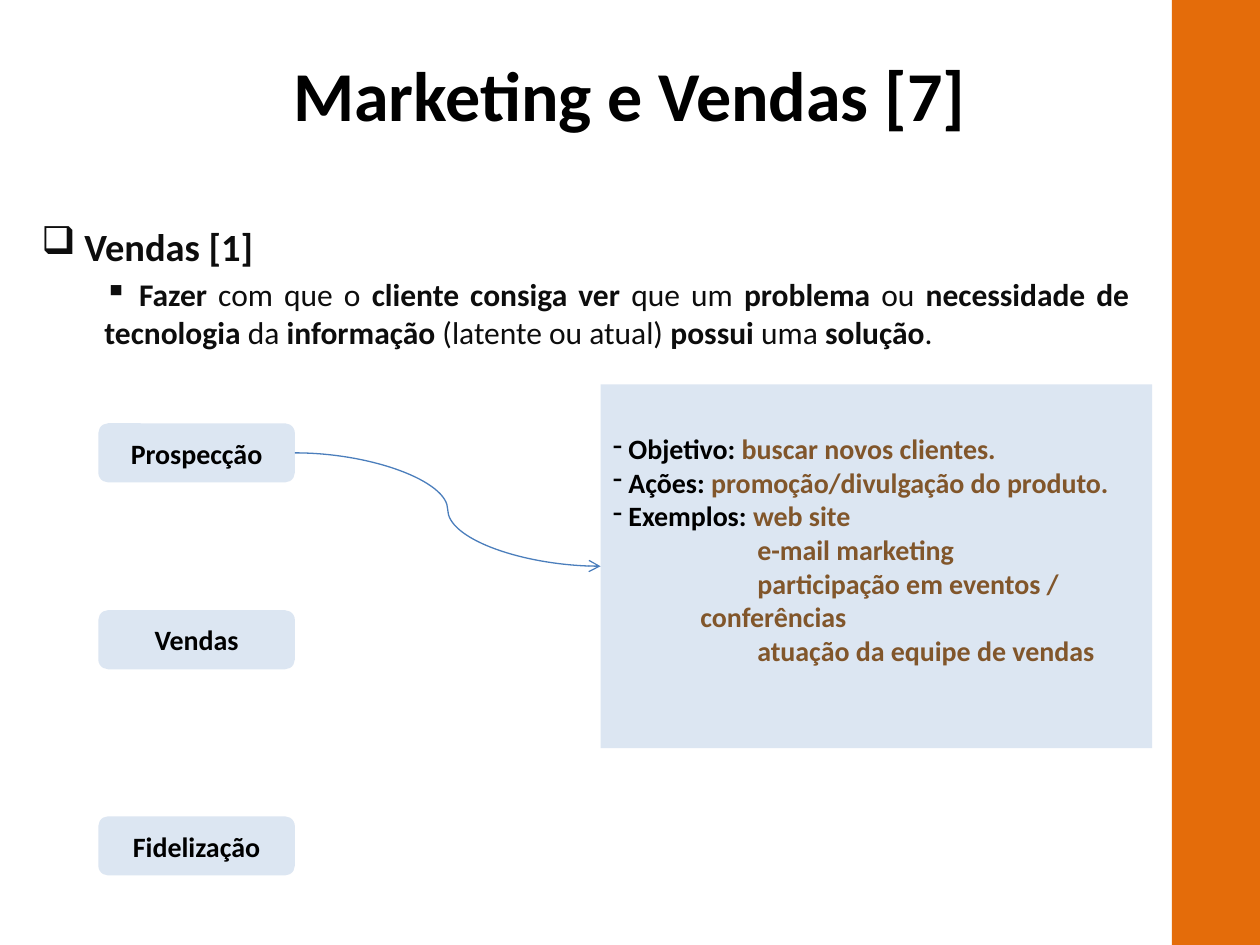
import lxml.etree
import pptx
import pptx.dml.color
import pptx.enum.shapes
import pptx.enum.text
import pptx.oxml.ns
import pptx.util

Pt = pptx.util.Pt
RGBColor = pptx.dml.color.RGBColor
Align = pptx.enum.text.PP_ALIGN
Anchor = pptx.enum.text.MSO_ANCHOR
Shape = pptx.enum.shapes.MSO_SHAPE
qn = pptx.oxml.ns.qn

FONT = "Calibri"
BLACK = RGBColor(0x00, 0x00, 0x00)
INK = RGBColor(0x0D, 0x0D, 0x0D)
BROWN = RGBColor(0x81, 0x56, 0x2B)
ORANGE = RGBColor(0xE4, 0x6C, 0x0A)
PALE_BLUE = RGBColor(0xDC, 0xE6, 0xF2)
LINE_BLUE = RGBColor(0x4B, 0x7E, 0xBC)

STAGES = (("Prospecção", 0), ("Vendas", 106.8), ("Fidelização", 224.6))
DEFINITION = (
    " *Fazer* com que o *cliente consiga ver* que um *problema* ou "
    "*necessidade de tecnologia* da *informação* (latente ou atual) "
    "*possui* uma *solução*."
)
DETAILS = (
    (" Objetivo: ", "buscar novos clientes."),
    (" Ações: ", "promoção/divulgação do produto."),
    (" Exemplos: ", "web site"),
)
EXAMPLES = (
    "e-mail marketing",
    "participação em eventos / conferências",
    "atuação da equipe de vendas",
)


def add_span(para, text, size, color, bold=True):
    """Append a formatted run to a paragraph."""
    span = para.add_run()
    span.text = text
    span.font.name = FONT
    span.font.size = Pt(size)
    span.font.bold = bold
    span.font.color.rgb = color


def set_indent(para, left, first=0, bullet=None):
    """Set a paragraph's indents and, if given, its bullet."""
    properties = para._p.get_or_add_pPr()
    properties.set("marL", str(Pt(left)))
    properties.set("indent", str(Pt(first)))
    if bullet:
        lxml.etree.SubElement(properties, qn("a:buChar")).set("char", bullet)


def add_panel(page, kind, left, top, width, height, color):
    """Add a flat filled shape without outline."""
    box = page.shapes.add_shape(kind, Pt(left), Pt(top), Pt(width), Pt(height))
    box.shadow.inherit = False
    box.fill.solid()
    box.fill.fore_color.rgb = color
    box.line.fill.background()
    box.text_frame.word_wrap = True
    box.text_frame.vertical_anchor = Anchor.MIDDLE
    return box


def add_title(page, left, top, width, height):
    """Place and format the title placeholder."""
    title = page.shapes.title
    title.left, title.top = Pt(left), Pt(top)
    title.width, title.height = Pt(width), Pt(height)
    title.text_frame.vertical_anchor = Anchor.MIDDLE
    para = title.text_frame.paragraphs[0]
    para.alignment = Align.CENTER
    add_span(para, "Marketing e Vendas [7]", 40, BLACK)


def add_definition(page, left, top, width, height):
    """Write the topic and its definition with bold key words."""
    box = page.shapes.add_textbox(Pt(left), Pt(top), Pt(width), Pt(height))
    frame = box.text_frame
    frame.word_wrap = True
    topic = frame.paragraphs[0]
    set_indent(topic, 0, bullet="❑")
    topic.alignment = Align.JUSTIFY
    add_span(topic, " Vendas [1]", 22, INK)
    definition = frame.add_paragraph()
    definition.level = 1
    set_indent(definition, 36, bullet="▪")
    definition.alignment = Align.JUSTIFY
    definition.space_before = Pt(3.6)
    for index, text in enumerate(DEFINITION.split("*")):
        add_span(definition, text, 18, INK, bold=index % 2 == 1)


def add_stages(page, left, top, width, height):
    """Stack the sales stages and return their boxes."""
    boxes = []
    for name, offset in STAGES:
        box = add_panel(page, Shape.ROUNDED_RECTANGLE, left, top + offset,
                        width, height, PALE_BLUE)
        para = box.text_frame.paragraphs[0]
        para.alignment = Align.CENTER
        add_span(para, name, 16, BLACK)
        boxes.append(box)
    return boxes


def add_details(page, left, top, width, height):
    """Describe the first stage in a panel and return the panel."""
    box = add_panel(page, Shape.RECTANGLE, left, top, width, height, PALE_BLUE)
    frame = box.text_frame
    frame.margin_bottom = Pt(23)
    para = frame.paragraphs[0]
    for index, (label, value) in enumerate(DETAILS):
        if index:
            para = frame.add_paragraph()
        set_indent(para, 0, bullet="-")
        para.alignment = Align.LEFT
        add_span(para, label, 16, BLACK)
        add_span(para, value, 16, BROWN)
    for example in EXAMPLES:
        para = frame.add_paragraph()
        set_indent(para, 50, first=32.5)
        para.alignment = Align.LEFT
        add_span(para, example, 16, BROWN)
    return box


def link(page, source, target):
    """Draw a curved arrow from the source's right to the target's left."""
    arrow = page.shapes.add_connector(
        pptx.enum.shapes.MSO_CONNECTOR.CURVE, 0, 0, 0, 0)
    arrow.begin_connect(source, 3)
    arrow.end_connect(target, 1)
    arrow.line.color.rgb = LINE_BLUE
    arrow.line.width = Pt(0.75)
    line = arrow.line._get_or_add_ln()
    lxml.etree.SubElement(line, qn("a:tailEnd")).set("type", "arrow")
    lxml.etree.SubElement(arrow._element.spPr, qn("a:effectLst"))


def main():
    """Build the slide and save the deck."""
    deck = pptx.Presentation()
    deck.slide_width, deck.slide_height = Pt(720), Pt(540)
    page = deck.slides.add_slide(deck.slide_layouts.get_by_name("Title Only"))
    add_title(page, 16.6, 11.5, 686.2, 84.2)
    add_definition(page, 16.6, 123.8, 635.8, 416)
    add_panel(page, Shape.RECTANGLE, 669.6, 0, 50.4, 540, ORANGE)
    stages = add_stages(page, 56.2, 241.9, 112.3, 33.8)
    details = add_details(page, 343.2, 219.6, 315.2, 208)
    link(page, stages[0], details)
    deck.save("out.pptx")


if __name__ == "__main__":
    main()
